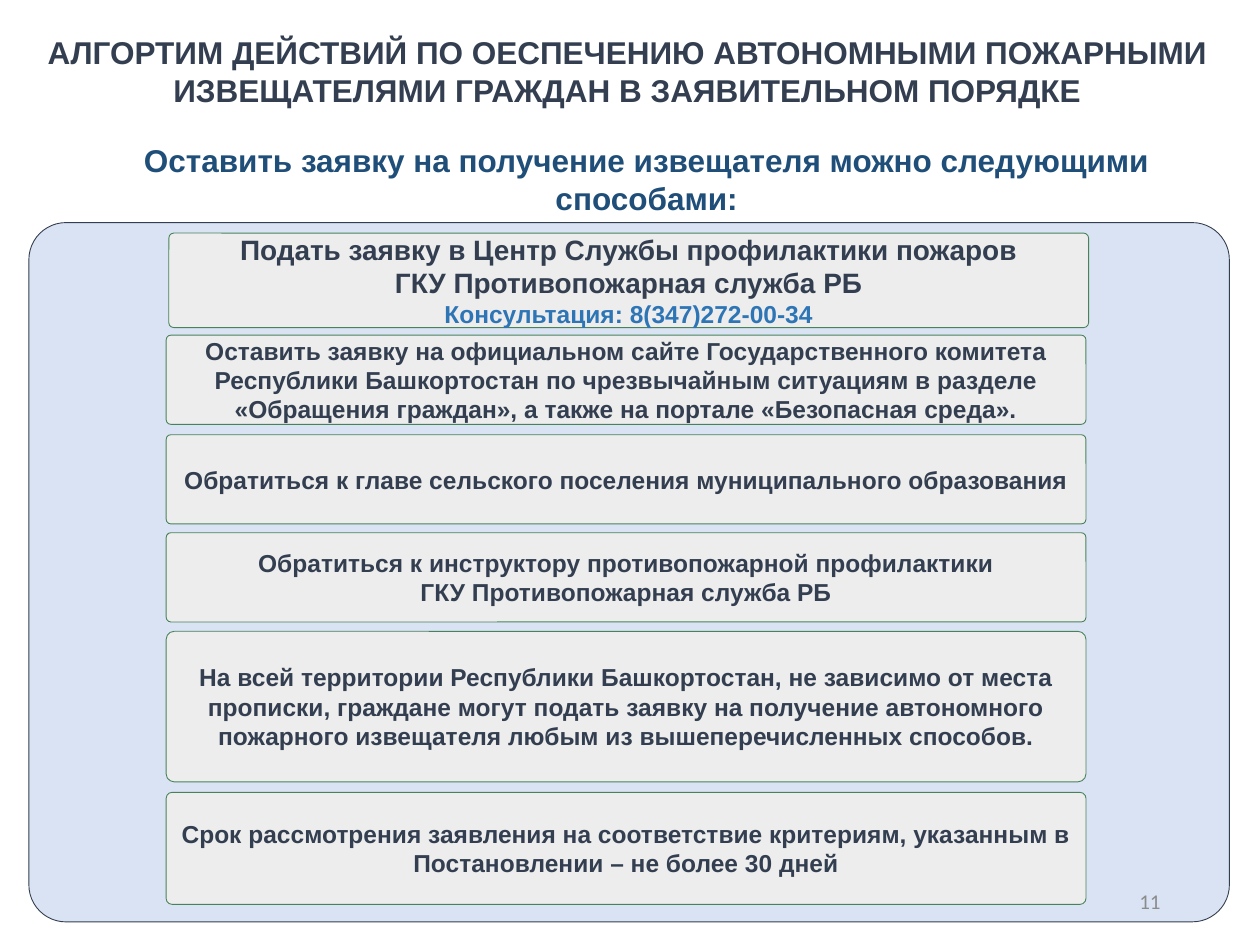
"""Build the slide on how residents can request autonomous fire detectors."""
from pptx import Presentation, util as u
from pptx.dml.color import RGBColor
from pptx.enum import shapes, text

Pt = u.Pt
INK, NAVY, BLUE, GREY = "333F50", "1F4E79", "2E75B6", "8C8C8C"
PANEL, CARD, GREEN = "DAE3F3", "EDEDED", "48825A"
CORNER = 0.053

TITLE = ("АЛГОРТИМ ДЕЙСТВИЙ ПО ОЕСПЕЧЕНИЮ АВТОНОМНЫМИ ПОЖАРНЫМИ "
         "ИЗВЕЩАТЕЛЯМИ ГРАЖДАН В ЗАЯВИТЕЛЬНОМ ПОРЯДКЕ")
SUBTITLE = "Оставить заявку на получение извещателя можно следующими способами:"
PAGE = "11"
CARD_WIDTH = 525.6
WAYS = [
    (96.5, 133.2, 54, [
        ("Подать заявку в Центр Службы профилактики пожаров\vГКУ Противопожарная служба РБ", 16, INK),
        ("Консультация: 8(347)272-00-34", 14, BLUE)]),
    (95, 191.5, 51, [
        ("Оставить заявку на официальном сайте Государственного комитета "
         "Республики Башкортостан по чрезвычайным ситуациям в разделе "
         "«Обращения граждан», а также на портале «Безопасная среда».", 14, INK)]),
    (95, 248.4, 51, [
        ("Обратиться к главе сельского поселения муниципального образования", 14, INK)]),
    (95, 304.4, 51, [
        ("Обратиться к инструктору противопожарной профилактики\vГКУ Противопожарная служба РБ", 14, INK)]),
    (95, 360.8, 86, [
        ("На всей территории Республики Башкортостан, не зависимо от места "
         "прописки, граждане могут подать заявку на получение автономного "
         "пожарного извещателя любым из вышеперечисленных способов.", 14, INK)]),
    (95, 452.8, 64, [
        ("Срок рассмотрения заявления на соответствие критериям, указанным в "
         "Постановлении – не более 30 дней", 14, INK)]),
]


def color(hex_value):
    return RGBColor.from_string(hex_value)


def write(holder, paragraphs, align=text.PP_ALIGN.CENTER, face="Arial", bold=True):
    frame = holder.text_frame
    frame.word_wrap = True
    frame.auto_size = text.MSO_AUTO_SIZE.NONE
    frame.vertical_anchor = text.MSO_ANCHOR.MIDDLE
    for index, (words, size, ink) in enumerate(paragraphs):
        paragraph = frame.add_paragraph() if index else frame.paragraphs[0]
        paragraph.text = words
        paragraph.alignment = align
        paragraph.line_spacing = 1.0
        font = paragraph.font
        font.name, font.size, font.bold = face, Pt(size), bold
        font.color.rgb = color(ink)
    return frame


def rounded(slide, box, fill, line):
    shape = slide.shapes.add_shape(shapes.MSO_SHAPE.ROUNDED_RECTANGLE, *map(Pt, box))
    shape.adjustments[0] = CORNER
    shape.shadow.inherit = False
    shape.fill.solid()
    shape.fill.fore_color.rgb = color(fill)
    shape.line.color.rgb = color(line)
    shape.line.width = Pt(0.5)
    return shape


def main():
    deck = Presentation()
    deck.slide_width, deck.slide_height = Pt(720), Pt(540)
    slide = deck.slides.add_slide(deck.slide_layouts[5])

    title = slide.shapes.title
    title.left, title.top, title.width, title.height = map(Pt, (-1.5, 15, 720, 51))
    write(title, [(TITLE, 18, INK)])

    rounded(slide, (16.5, 127.2, 686, 399.6), PANEL, INK)
    subtitle = slide.shapes.add_textbox(*map(Pt, (52, 76.5, 635, 51)))
    write(subtitle, [(SUBTITLE, 18, NAVY)])

    for left, top, height, paragraphs in WAYS:
        way = rounded(slide, (left, top, CARD_WIDTH, height), CARD, GREEN)
        frame = write(way, paragraphs)
        frame.margin_left = frame.margin_right = Pt(3)
        frame.margin_top = frame.margin_bottom = Pt(6)

    page = slide.shapes.add_textbox(*map(Pt, (508.3, 500.5, 162, 28.8)))
    write(page, [(PAGE, 12, GREY)], text.PP_ALIGN.RIGHT, "Calibri", False)

    deck.save("out.pptx")


if __name__ == "__main__":
    main()
